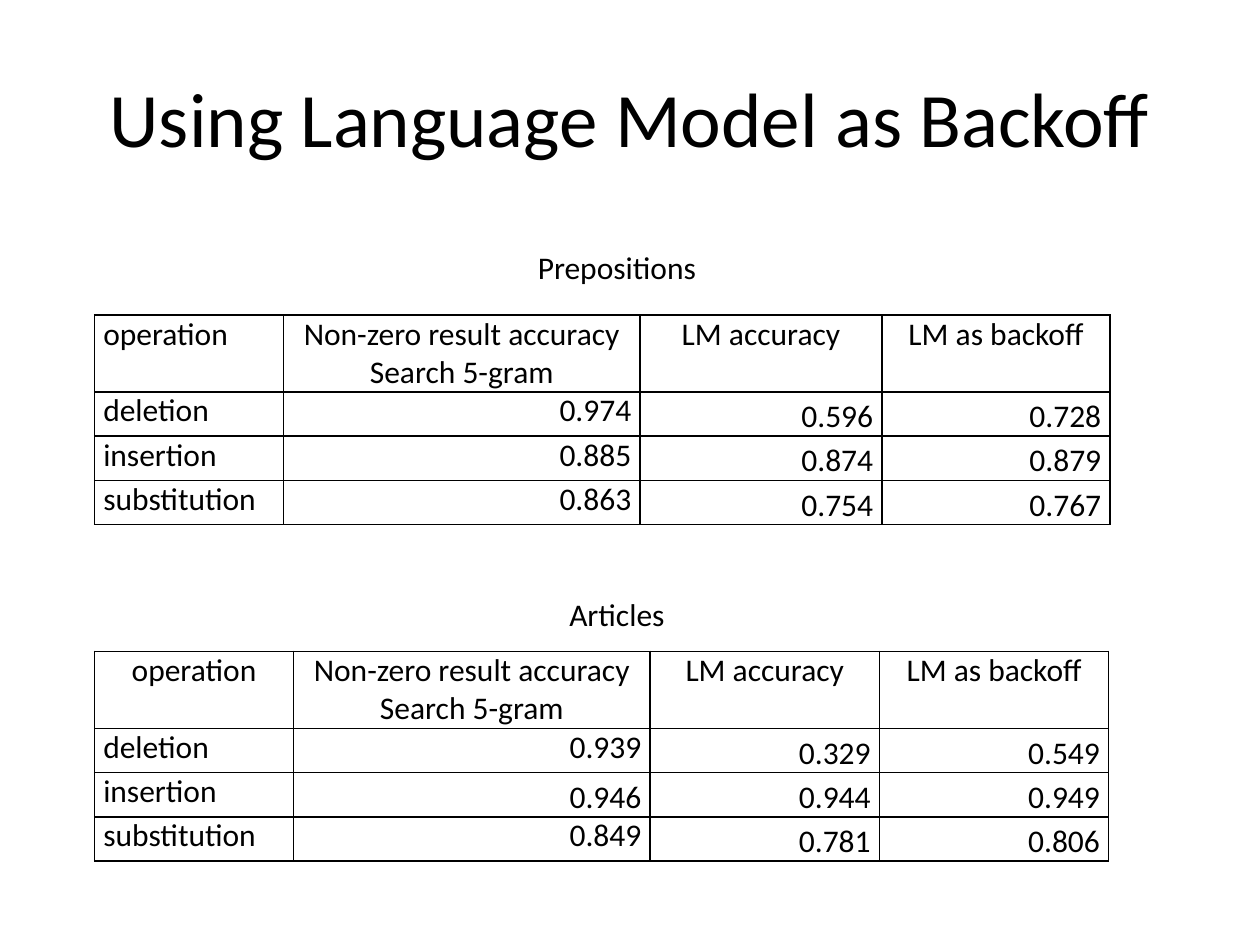
from dataclasses import dataclass

from lxml import etree
from pptx import Presentation
from pptx import util as u
from pptx.dml.color import RGBColor
from pptx.enum import text as t
from pptx.oxml import ns

BLACK = "000000"
LEFT, MID, RIGHT = t.PP_ALIGN.LEFT, t.PP_ALIGN.CENTER, t.PP_ALIGN.RIGHT
HEADS = ("Non-zero result accuracy\nSearch 5-gram", "LM accuracy", "LM as backoff")
ROWS = (0.61, 0.35, 0.35, 0.35)
INSETS = {"margin_left": 0.07, "margin_right": 0.07, "margin_top": 0, "margin_bottom": 0}


@dataclass
class Grid:
    top: float
    cols: tuple
    first: t.PP_ALIGN  # alignment of the "operation" heading
    data: dict
    loose: tuple = ()  # operations whose first value also has loose lines


@dataclass
class Label:
    text: str
    box: tuple
    wrap: bool


GRIDS = (
    Grid(2.5, (1.5, 2.83, 1.92, 1.81), LEFT, {
        "deletion": ("0.974", "0.596", "0.728"),
        "insertion": ("0.885", "0.874", "0.879"),
        "substitution": ("0.863", "0.754", "0.767"),
    }),
    Grid(5.17, (1.58, 2.83, 1.82, 1.82), MID, {
        "deletion": ("0.939", "0.329", "0.549"),
        "insertion": ("0.946", "0.944", "0.949"),
        "substitution": ("0.849", "0.781", "0.806"),
    }, ("insertion",)),
)
LABELS = (
    Label("Prepositions", (4.17, 1.92, 1.47, 0.4), False),
    Label("Articles", (4.42, 4.67, 1.33, 0.4), True),
)


def paint(color, value: str) -> None:
    color.rgb = RGBColor.from_string(value)


def write(frame, words: str, size: float, align, space=None) -> None:
    """Fill a text frame, one paragraph for each line."""
    frame.text = words
    for par in frame.paragraphs:
        par.alignment = align
        if space:
            par.line_spacing = space
        for run in par.runs:
            for key, value in {"name": "Calibri", "size": u.Pt(size), "bold": False}.items():
                setattr(run.font, key, value)
            paint(run.font.color, BLACK)


def border(cell, value: str, width: float) -> None:
    """Put a solid line on all four sides of a cell."""
    props = cell._tc.get_or_add_tcPr()
    for spot, side in enumerate(("lnL", "lnR", "lnT", "lnB")):
        line = etree.Element(ns.qn(f"a:{side}"), w=str(u.Pt(width)))
        fill = etree.SubElement(line, ns.qn("a:solidFill"))
        etree.SubElement(fill, ns.qn("a:srgbClr"), val=value)
        props.insert(spot, line)


def draw_grid(slide, grid: Grid) -> None:
    table = slide.shapes.add_table(
        len(ROWS), len(grid.cols), u.Inches(0.75), u.Inches(grid.top),
        u.Inches(sum(grid.cols)), u.Inches(sum(ROWS))).table
    table.first_row = table.horz_banding = False
    for col, width in zip(table.columns, grid.cols):
        col.width = u.Inches(width)
    for row, height in zip(table.rows, ROWS):
        row.height = u.Inches(height)

    lines = [("operation", *HEADS)] + [(name, *vals) for name, vals in grid.data.items()]
    for r, line in enumerate(lines):
        for c, words in enumerate(line):
            cell = table.cell(r, c)
            for key, value in INSETS.items():
                setattr(cell, key, u.Inches(value))
            if r == 0:
                align = MID if c else grid.first
            else:
                align = RIGHT if c else LEFT
            loose = r > 0 and (c > 1 or (c == 1 and line[0] in grid.loose))
            write(cell.text_frame, words, 18, align, 1.15 if loose else None)
            cell.fill.background()
            border(cell, BLACK, 1)


def draw_label(slide, label: Label) -> None:
    frame = slide.shapes.add_textbox(*map(u.Inches, label.box)).text_frame
    frame.word_wrap = label.wrap
    frame.auto_size = t.MSO_AUTO_SIZE.SHAPE_TO_FIT_TEXT
    write(frame, label.text, 18, LEFT)


def main() -> None:
    deck = Presentation()
    deck.slide_width, deck.slide_height = u.Inches(10), u.Inches(7.5)
    slide = deck.slides.add_slide(deck.slide_layouts[5])

    # Title
    title = slide.shapes.title
    for key, value in {"left": 0.5, "top": 0.3, "width": 9, "height": 1.25}.items():
        setattr(title, key, u.Inches(value))
    title.text_frame.vertical_anchor = t.MSO_ANCHOR.MIDDLE
    write(title.text_frame, "Using Language Model as Backoff", 44, MID)

    # Tables and their captions
    for grid in GRIDS:
        draw_grid(slide, grid)
    for label in LABELS:
        draw_label(slide, label)

    deck.save("out.pptx")


if __name__ == "__main__":
    main()
